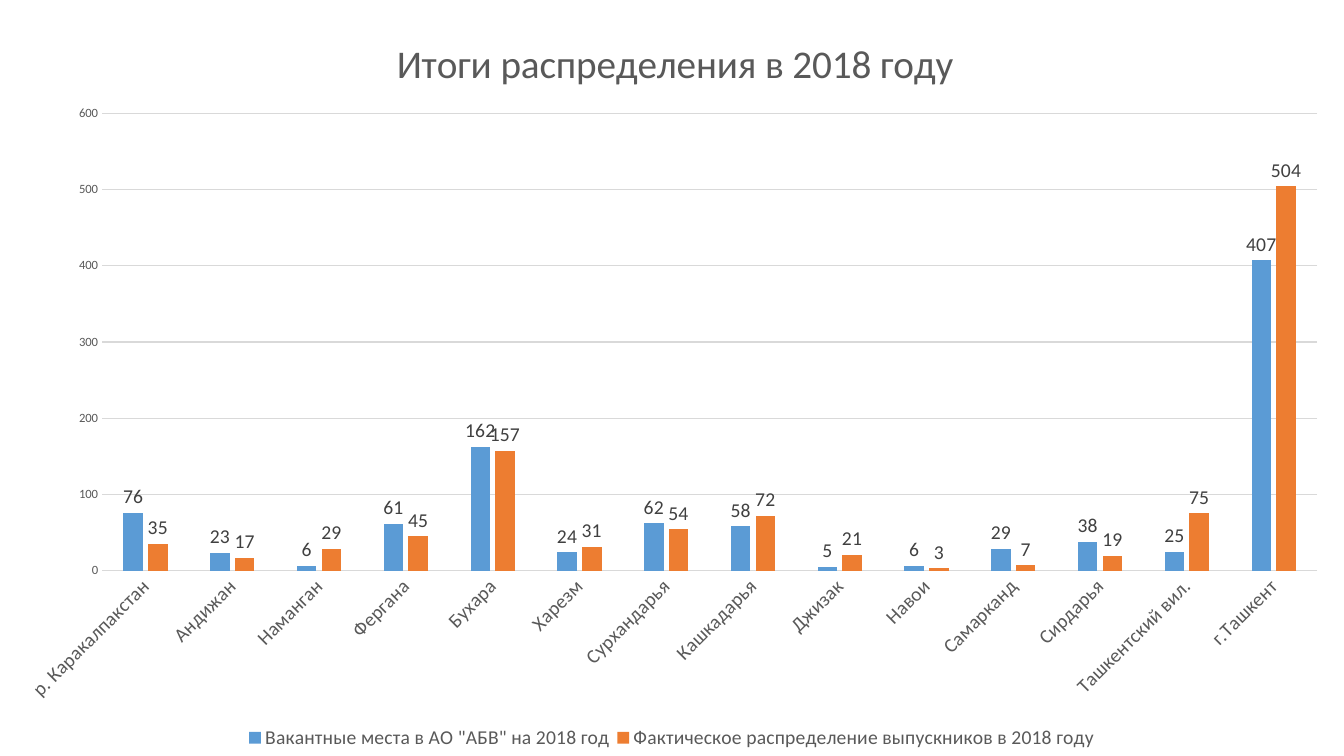
import dataclasses

import pptx
import pptx.chart.data
import pptx.dml.color
import pptx.enum.chart
import pptx.oxml
import pptx.oxml.ns
import pptx.util


@dataclasses.dataclass(frozen=True)
class Theme:
    font: str = "Calibri"
    text: str = "595959"
    value_text: str = "404040"
    rule: str = "D9D9D9"
    series: tuple = ("5B9BD5", "ED7D31")
    title_size: int = 28
    label_size: int = 14
    scale_size: int = 9


TITLE = "Итоги распределения в 2018 году"
SERIES_NAMES = (
    'Вакантные места в АО "АБВ" на 2018 год',
    "Фактическое распределение выпускников в 2018 году",
)
REGIONS = {
    "р. Каракалпакстан": (76, 35),
    "Андижан": (23, 17),
    "Наманган": (6, 29),
    "Фергана": (61, 45),
    "Бухара": (162, 157),
    "Харезм": (24, 31),
    "Сурхандарья": (62, 54),
    "Кашкадарья": (58, 72),
    "Джизак": (5, 21),
    "Навои": (6, 3),
    "Самарканд": (29, 7),
    "Сирдарья": (38, 19),
    "Ташкентский вил.": (25, 75),
    "г.Ташкент": (407, 504),
}


def rgb(color):
    return pptx.dml.color.RGBColor.from_string(color)


def place(element, index, target=None, **fractions):
    """Give a chart part a manual layout in fractions of the chart."""
    for old in element.findall(pptx.oxml.ns.qn("c:layout")):
        element.remove(old)
    inner = f'<c:layoutTarget val="{target}"/>' if target else ""
    modes = "".join(f'<c:{key}Mode val="edge"/>' for key in "xy")
    values = "".join(f'<c:{key} val="{value}"/>' for key, value in fractions.items())
    element.insert(index, pptx.oxml.parse_xml(
        f'<c:layout {pptx.oxml.ns.nsdecls("c")}><c:manualLayout>'
        f"{inner}{modes}{values}</c:manualLayout></c:layout>"))


class ChartSlide:
    def __init__(self, presentation, theme):
        self.theme = theme
        self.slide = presentation.slides.add_slide(presentation.slide_layouts[6])

    def style_font(self, font, size, color):
        font.name = self.theme.font
        font.size = pptx.util.Pt(size)
        font.color.rgb = rgb(color)
        font.bold = False

    def style_rule(self, line):
        line.color.rgb = rgb(self.theme.rule)
        line.width = pptx.util.Pt(0.75)

    def add_columns(self, names, rows, left, top, width, height):
        data = pptx.chart.data.CategoryChartData(number_format="General")
        data.categories = list(rows)
        for name, values in zip(names, zip(*rows.values())):
            data.add_series(name, values)
        chart = self.slide.shapes.add_chart(
            pptx.enum.chart.XL_CHART_TYPE.COLUMN_CLUSTERED,
            left, top, width, height, data).chart
        self.style_font(chart.font, 10, "000000")

        # Columns and their values
        plot = chart.plots[0]
        plot.gap_width, plot.overlap = 219, -27
        plot.vary_by_categories = False
        for series, color in zip(plot.series, self.theme.series):
            series.format.fill.solid()
            series.format.fill.fore_color.rgb = rgb(color)
            series.invert_if_negative = False
            labels = series.data_labels
            labels.show_value = True
            labels.position = pptx.enum.chart.XL_LABEL_POSITION.OUTSIDE_END
            self.style_font(labels.font, self.theme.label_size, self.theme.value_text)
        place(chart._chartSpace.chart.plotArea, 0, "inner", x=0.076, y=0.15, w=0.904, h=0.605)
        return chart

    def add_axes(self, chart, maximum, step):
        regions, scale = chart.category_axis, chart.value_axis
        for axis, size in ((regions, self.theme.label_size), (scale, self.theme.scale_size)):
            axis.major_tick_mark = pptx.enum.chart.XL_TICK_MARK.NONE
            axis.minor_tick_mark = pptx.enum.chart.XL_TICK_MARK.NONE
            self.style_font(axis.tick_labels.font, size, self.theme.text)
        self.style_rule(regions.format.line)
        regions._element.txPr.bodyPr.set("rot", str(-45 * 60000))
        scale.format.line.fill.background()
        scale.minimum_scale, scale.maximum_scale, scale.major_unit = 0, maximum, step
        scale.has_major_gridlines = True
        self.style_rule(scale.major_gridlines.format.line)

    def add_title(self, chart, text):
        chart.has_title = True
        title = chart.chart_title
        title.include_in_layout = False
        heading = title.text_frame.paragraphs[0]
        heading.text = text
        self.style_font(heading.font, self.theme.title_size, self.theme.text)
        place(title._element, 1, x=0.29, y=0.04)

    def add_legend(self, chart):
        chart.has_legend = True
        legend = chart.legend
        legend.position = pptx.enum.chart.XL_LEGEND_POSITION.BOTTOM
        legend.include_in_layout = False
        self.style_font(legend.font, self.theme.label_size, self.theme.text)
        place(legend._element, 1, x=0.18, y=0.96, w=0.64, h=0.04)


def main():
    presentation = pptx.Presentation()
    presentation.slide_width = pptx.util.Cm(33.87)
    presentation.slide_height = pptx.util.Cm(19.05)

    # The chart fills the slide and carries the heading
    results = ChartSlide(presentation, Theme())
    distribution = results.add_columns(
        SERIES_NAMES, REGIONS, pptx.util.Cm(0), pptx.util.Cm(0),
        presentation.slide_width, presentation.slide_height)
    results.add_axes(distribution, maximum=600, step=100)
    results.add_title(distribution, TITLE)
    results.add_legend(distribution)

    presentation.save("out.pptx")


if __name__ == "__main__":
    main()
